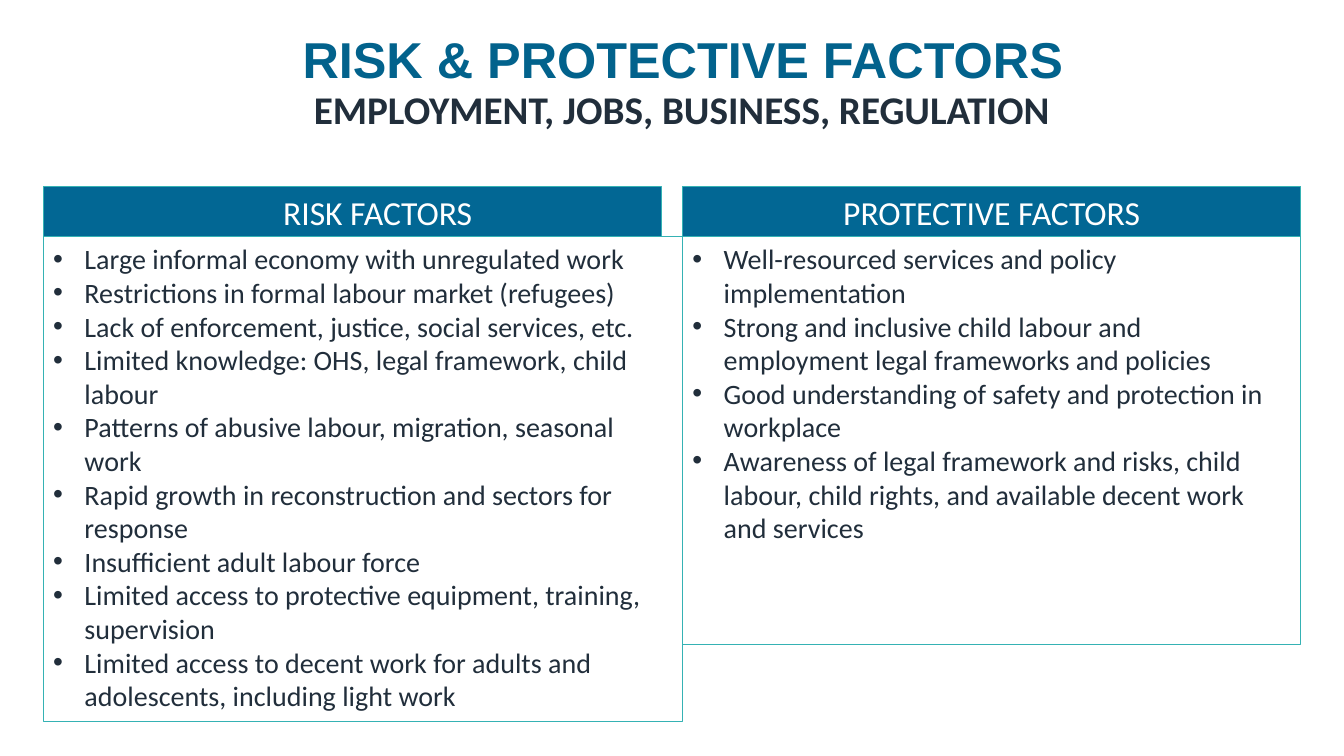
from pptx import Presentation
from pptx.dml.color import RGBColor
from pptx.enum.shapes import MSO_SHAPE
from pptx.enum.text import MSO_ANCHOR, PP_ALIGN
from pptx.oxml.xmlchemy import OxmlElement
from pptx.util import Inches, Pt

RECTANGLE = MSO_SHAPE.RECTANGLE
TOP, MIDDLE = MSO_ANCHOR.TOP, MSO_ANCHOR.MIDDLE
LEFT, CENTER = PP_ALIGN.LEFT, PP_ALIGN.CENTER

COLORS = {
    "title": "02628C",
    "header": "026794",
    "border": "35B2B4",
    "ink": "212E3B",
    "white": "FFFFFF",
}
MARGIN, COLUMN_WIDTH, COLUMN_PITCH = 0.43, 6.13, 6.34
HEADER_TOP, HEADER_HEIGHT = 1.85, 0.5
PANEL_TOP = HEADER_TOP + HEADER_HEIGHT
BULLET_INDENT = 0.31

FACTORS = [
    {
        "heading": "RISK FACTORS",
        "heading_indent": 0.5,
        "panel_size": (COLUMN_PITCH, 4.81),
        "points": [
            "Large informal economy with unregulated work",
            "Restrictions in formal labour market (refugees)",
            "Lack of enforcement, justice, social services, etc.",
            "Limited knowledge: OHS, legal framework, child labour",
            "Patterns of abusive labour, migration, seasonal work",
            "Rapid growth in reconstruction and sectors for response",
            "Insufficient adult labour force",
            "Limited access to protective equipment, training, supervision",
            "Limited access to decent work for adults and adolescents, including light work",
        ],
    },
    {
        "heading": "PROTECTIVE FACTORS",
        "heading_indent": 0,
        "panel_size": (COLUMN_WIDTH, 4.04),
        "points": [
            "Well-resourced services and policy implementation",
            "Strong and inclusive child labour and employment legal frameworks and policies",
            "Good understanding of safety and protection in workplace",
            "Awareness of legal framework and risks, child labour, child rights, "
            "and available decent work and services",
        ],
    },
]


def color(name):
    """Return the named palette colour."""
    return RGBColor.from_string(COLORS[name])


def write(frame, lines, size, ink, font="Calibri", bold=False, align=CENTER, anchor=TOP):
    """Fill a text frame with one uniformly styled paragraph per line."""
    frame.word_wrap = True
    frame.vertical_anchor = anchor
    frame.text = "\n".join(lines)
    for paragraph in frame.paragraphs:
        paragraph.alignment = align
        paragraph.font.name = font
        paragraph.font.size = Pt(size)
        paragraph.font.bold = bold
        paragraph.font.color.rgb = color(ink)


def indent(paragraph, left, hanging=0):
    """Set the left margin and hanging indent of a paragraph in inches."""
    properties = paragraph._p.get_or_add_pPr()
    properties.set("marL", str(Inches(left)))
    properties.set("indent", str(Inches(-hanging)))
    return properties


def add_bullet(paragraph):
    """Give a paragraph a round bullet with a hanging indent."""
    properties = indent(paragraph, BULLET_INDENT, BULLET_INDENT)
    typeface = OxmlElement("a:buFont")
    typeface.set("typeface", "Arial")
    bullet = OxmlElement("a:buChar")
    bullet.set("char", "•")
    properties.insert_element_before(typeface, "a:tabLst", "a:defRPr", "a:extLst")
    properties.insert_element_before(bullet, "a:tabLst", "a:defRPr", "a:extLst")


def add_heading(slide, box, text, **style):
    """Add a centred heading and return its paragraph."""
    frame = slide.shapes.add_textbox(*map(Inches, box)).text_frame
    write(frame, [text], bold=True, **style)
    return frame.paragraphs[0]


def add_box(slide, box, fill=None):
    """Add an outlined rectangle and return its text frame."""
    rectangle = slide.shapes.add_shape(RECTANGLE, *map(Inches, box))
    rectangle.shadow.inherit = False
    rectangle.line.color.rgb = color("border")
    rectangle.line.width = Pt(0.75)
    if fill:
        rectangle.fill.solid()
        rectangle.fill.fore_color.rgb = color(fill)
    else:
        rectangle.fill.background()
    return rectangle.text_frame


def add_factor_column(slide, left, factor):
    """Add a bulleted panel with its header bar."""
    panel = add_box(slide, (left, PANEL_TOP, *factor["panel_size"]))
    write(panel, factor["points"], 20, "ink", align=LEFT)
    for point in panel.paragraphs:
        add_bullet(point)
    header = add_box(slide, (left, HEADER_TOP, COLUMN_WIDTH, HEADER_HEIGHT), "header")
    write(header, [factor["heading"]], 24, "white")
    indent(header.paragraphs[0], factor["heading_indent"])


def main():
    """Build and save the slide."""
    deck = Presentation()
    deck.slide_width, deck.slide_height = Inches(13.33), Inches(7.5)
    slide = deck.slides.add_slide(deck.slide_layouts[6])
    title = add_heading(slide, (2.46, -0.11, 8.63, 1.45), "RISK & PROTECTIVE FACTORS",
                        size=36, ink="title", font="Arial", anchor=MIDDLE)
    title.line_spacing = 0.9
    for column, factor in enumerate(FACTORS):
        add_factor_column(slide, MARGIN + column * COLUMN_PITCH, factor)
    subtitle = add_heading(slide, (1.53, 0.8, 9.96, 1.04),
                           "EMPLOYMENT, JOBS, BUSINESS, REGULATION", size=28, ink="ink")
    indent(subtitle, 0.5)
    deck.save("out.pptx")


if __name__ == "__main__":
    main()
